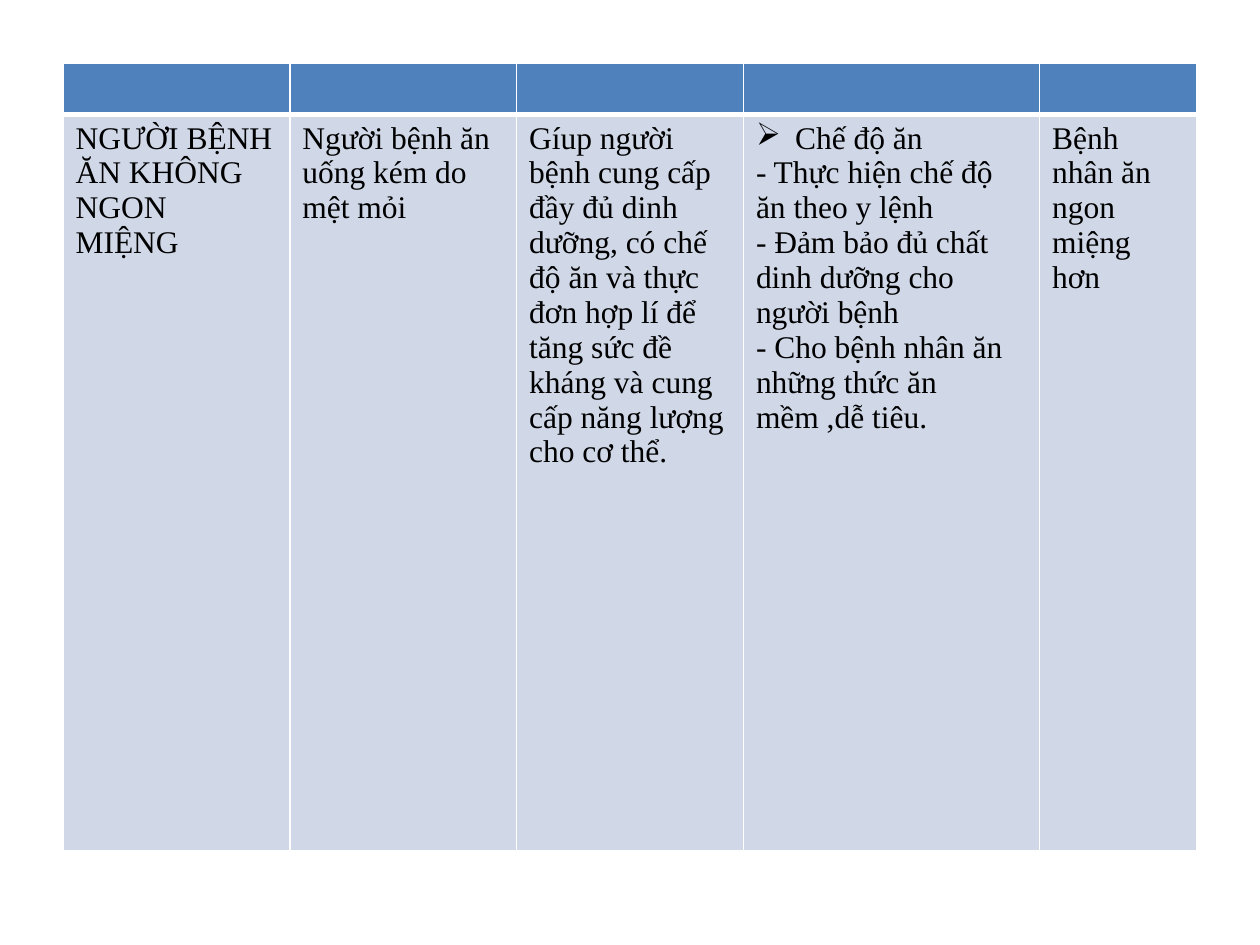
from dataclasses import dataclass

from lxml.etree import SubElement
from pptx import Presentation
from pptx.dml.color import RGBColor
from pptx.oxml.ns import qn
from pptx.util import Emu, Inches, Pt

HEADER_BLUE = RGBColor(0x4F, 0x81, 0xBD)
BODY_BLUE = RGBColor(0xD0, 0xD8, 0xE8)
RULE_WHITE = RGBColor(0xFF, 0xFF, 0xFF)
INK = RGBColor(0x00, 0x00, 0x00)
FONT = "Times New Roman"
SLIDE_WIDTH, SLIDE_HEIGHT = Inches(10), Inches(7.5)
MARGIN = Inches(0.5)
HEADER_HEIGHT, BODY_HEIGHT = Inches(0.41), Inches(5.84)
HANGING = Inches(0.31)
HEADER_RULES = {"lnL": 1, "lnR": 1, "lnT": 1, "lnB": 3}
BODY_RULES = {"lnL": 1, "lnR": 1, "lnB": 1}


@dataclass(frozen=True)
class Line:
    """One paragraph of a care plan column."""
    text: str
    bullet: str = ""


@dataclass(frozen=True)
class Column:
    """A care plan column, its width a share of the slide's width."""
    share: float
    lines: tuple[Line, ...]


CARE_PLAN = (
    Column(0.18, (Line("NGƯỜI BỆNH ĂN KHÔNG NGON MIỆNG"),)),
    Column(0.18, (Line("Người bệnh ăn uống kém do mệt mỏi"),)),
    Column(0.18, (Line(
        "Gíup người bệnh cung cấp đầy đủ dinh dưỡng, có chế độ ăn và thực đơn "
        "hợp lí để tăng sức đề kháng và cung cấp năng lượng cho cơ thể."),)),
    Column(0.235, (
        Line("Chế độ ăn", "➢"),
        Line("- Thực hiện chế độ ăn theo y lệnh"),
        Line("- Đảm bảo đủ chất dinh dưỡng cho người bệnh"),
        Line("- Cho bệnh nhân ăn những thức ăn mềm ,dễ tiêu."),
    )),
    Column(0.125, (Line("Bệnh nhân ăn ngon miệng hơn"),)),
)


def style_cell(cell, fill: RGBColor, rules: dict[str, int]) -> None:
    """Give a cell its white rules and solid fill."""
    properties = cell._tc.get_or_add_tcPr()
    for side, points in rules.items():
        rule = SubElement(properties, qn(f"a:{side}"), w=str(Pt(points)))
        solid = SubElement(rule, qn("a:solidFill"))
        SubElement(solid, qn("a:srgbClr"), val=str(RULE_WHITE))
    cell.fill.solid()
    cell.fill.fore_color.rgb = fill


def write_lines(cell, lines: tuple[Line, ...]) -> None:
    """Write the lines of a column as paragraphs of its cell."""
    frame = cell.text_frame
    for index, line in enumerate(lines):
        paragraph = frame.add_paragraph() if index else frame.paragraphs[0]
        if line.bullet:
            layout = paragraph._p.get_or_add_pPr()
            layout.set("marL", str(HANGING))
            layout.set("indent", str(-HANGING))
            SubElement(layout, qn("a:buChar"), char=line.bullet)
        run = paragraph.add_run()
        run.text = line.text
        run.font.name = FONT
        run.font.size = Pt(18)
        run.font.color.rgb = INK


def main() -> None:
    """Build the care plan slide."""
    presentation = Presentation()
    presentation.slide_width, presentation.slide_height = SLIDE_WIDTH, SLIDE_HEIGHT
    slide = presentation.slides.add_slide(presentation.slide_layouts[6])
    table = slide.shapes.add_table(
        2, len(CARE_PLAN), MARGIN, MARGIN,
        SLIDE_WIDTH - 2 * MARGIN, HEADER_HEIGHT + BODY_HEIGHT).table
    table.rows[0].height, table.rows[1].height = HEADER_HEIGHT, BODY_HEIGHT
    for index, column in enumerate(CARE_PLAN):
        table.columns[index].width = Emu(round(SLIDE_WIDTH * column.share))
        style_cell(table.cell(0, index), HEADER_BLUE, HEADER_RULES)
        style_cell(table.cell(1, index), BODY_BLUE, BODY_RULES)
        write_lines(table.cell(1, index), column.lines)
    presentation.save("out.pptx")


if __name__ == "__main__":
    main()
